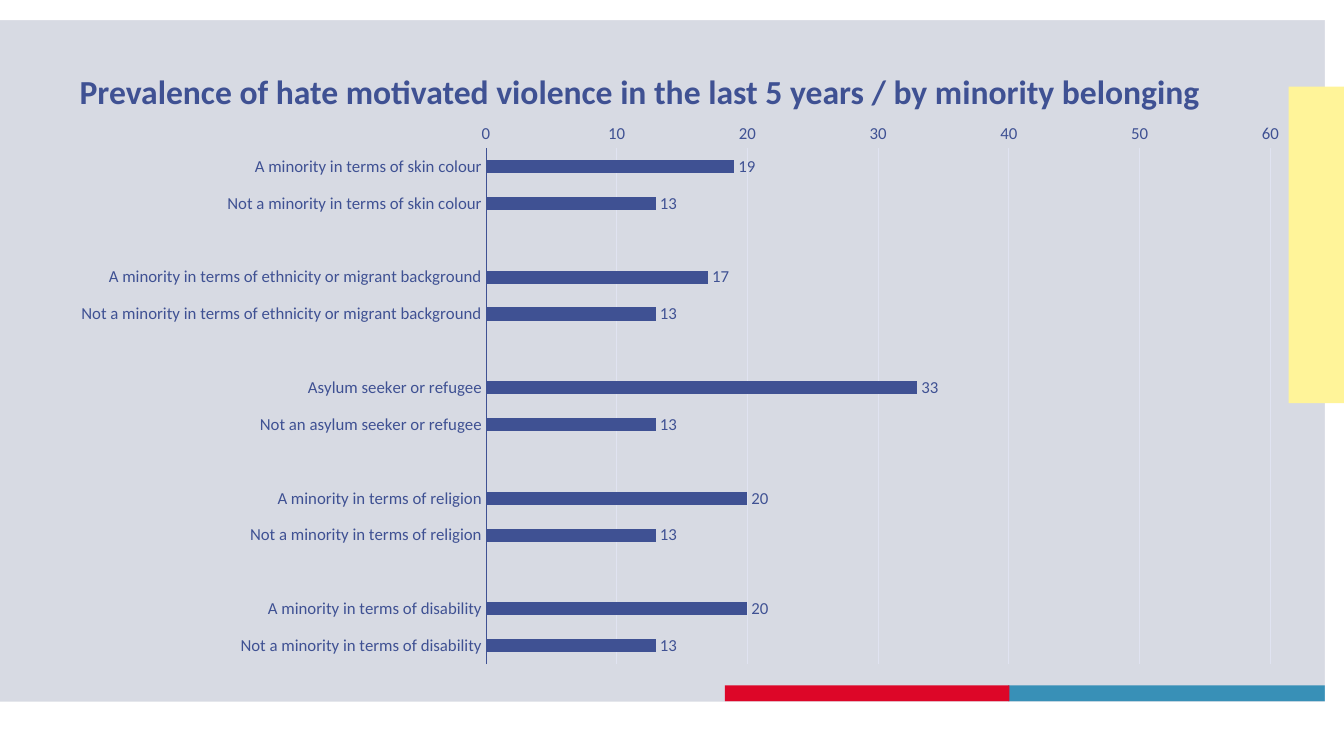
from lxml import etree
from pptx import Presentation
from pptx.chart.data import CategoryChartData
from pptx.dml.color import RGBColor
from pptx.enum.chart import XL_CHART_TYPE as ChartType
from pptx.enum.chart import XL_LABEL_POSITION as LabelPosition
from pptx.enum.chart import XL_TICK_MARK as TickMark
from pptx.enum.shapes import MSO_SHAPE as Shape
from pptx.enum.text import MSO_ANCHOR as Anchor
from pptx.oxml.ns import qn
from pptx.util import Inches, Pt

TITLE = "Prevalence of hate motivated violence in the last 5 years / by minority belonging"
FONT, NAVY, GRID, BACKGROUND = "Calibri", "3F5193", "E0E3F1", "D7DAE3"
NUMBER_FORMAT = "###0"

# Each pair compares a minority group with everyone else.
PAIRS = [
    (("A minority in terms of skin colour", 19),
     ("Not a minority in terms of skin colour", 13)),
    (("A minority in terms of ethnicity or migrant background", 17),
     ("Not a minority in terms of ethnicity or migrant background", 13)),
    (("Asylum seeker or refugee", 33),
     ("Not an asylum seeker or refugee", 13)),
    (("A minority in terms of religion", 20),
     ("Not a minority in terms of religion", 13)),
    (("A minority in terms of disability", 20),
     ("Not a minority in terms of disability", 13)),
]

# left, top, width, height, colour
BLOCKS = [
    (10, 6.8, 3.14, 0.16, "3890B7"),
    (7.19, 6.8, 2.82, 0.16, "DD0628"),
    (0, 0, 13.33, 0.2, "FFFFFF"),
    (13.14, 0, 0.2, 7.29, "FFFFFF"),
    (0, 6.96, 13.33, 0.55, "FFFFFF"),
    (12.78, 0.86, 0.55, 3.14, "FFF499"),
]
TITLE_BOX = (0.79, 0.75, 12.27, 0.36)
CHART_BOX = (0.57, 1.12, 12.37, 5.58)
PLOT_BOX = (4.82, 1.47, 7.78, 5.12)


def rgb(value):
    return RGBColor.from_string(value)


def inches(box):
    return [Inches(length) for length in box]


def style_font(font, size, bold=False):
    font.name, font.size, font.bold = FONT, Pt(size), bold
    font.color.rgb = rgb(NAVY)


def style_line(line, colour):
    line.color.rgb = rgb(colour)
    line.width = Pt(0.75)


def add_blocks(slide):
    for *box, colour in BLOCKS:
        block = slide.shapes.add_shape(Shape.RECTANGLE, *inches(box))
        block.shadow.inherit = False
        block.fill.solid()
        block.fill.fore_color.rgb = rgb(colour)
        block.line.fill.background()


def add_title(slide):
    frame = slide.shapes.add_textbox(*inches(TITLE_BOX)).text_frame
    frame.word_wrap = True
    frame.vertical_anchor = Anchor.BOTTOM
    frame.margin_left = frame.margin_top = frame.margin_right = frame.margin_bottom = 0
    para = frame.paragraphs[0]
    para.text = TITLE
    para.line_spacing = 0.9
    style_font(para.font, 24, bold=True)


def place_plot(chart):
    """Fix the inner plot area, as fractions of the chart frame."""
    area = chart.element.find(".//" + qn("c:plotArea"))
    for old in area.findall(qn("c:layout")):
        area.remove(old)
    layout = etree.Element(qn("c:layout"))
    manual = etree.SubElement(layout, qn("c:manualLayout"))
    left, top, width, height = CHART_BOX
    settings = {
        "layoutTarget": "inner", "xMode": "edge", "yMode": "edge",
        "x": round((PLOT_BOX[0] - left) / width, 4),
        "y": round((PLOT_BOX[1] - top) / height, 4),
        "w": round(PLOT_BOX[2] / width, 4),
        "h": round(PLOT_BOX[3] / height, 4),
    }
    for name, value in settings.items():
        etree.SubElement(manual, qn("c:" + name)).set("val", str(value))
    area.insert(0, layout)


def add_prevalence_chart(slide):
    data = CategoryChartData(number_format=NUMBER_FORMAT)
    rows = []
    for pair in PAIRS:
        if rows:
            rows.append(("", None))
        rows.extend(pair)
    data.categories = [label for label, _ in rows]
    data.add_series("Series 1", [value for _, value in rows])
    chart = slide.shapes.add_chart(
        ChartType.BAR_CLUSTERED, *inches(CHART_BOX), data).chart
    chart.has_legend = chart.has_title = False
    style_font(chart.font, 12)
    place_plot(chart)

    for axis in (chart.category_axis, chart.value_axis):
        axis.major_tick_mark = axis.minor_tick_mark = TickMark.NONE
        style_font(axis.tick_labels.font, 12)
    chart.category_axis.reverse_order = True
    style_line(chart.category_axis.format.line, NAVY)

    values = chart.value_axis
    values.minimum_scale, values.maximum_scale, values.major_unit = 0, 60, 10
    values.tick_labels.number_format = NUMBER_FORMAT
    values.tick_labels.number_format_is_linked = False
    values.format.line.fill.background()
    values.has_major_gridlines = True
    style_line(values.major_gridlines.format.line, GRID)

    plot = chart.plots[0]
    plot.gap_width = 182
    plot.vary_by_categories = False
    bars = plot.series[0]
    bars.format.fill.solid()
    bars.format.fill.fore_color.rgb = rgb(NAVY)
    labels = bars.data_labels
    labels.show_value = True
    labels.position = LabelPosition.OUTSIDE_END
    labels.number_format = NUMBER_FORMAT
    labels.number_format_is_linked = False
    style_font(labels.font, 12)


def main():
    deck = Presentation()
    deck.slide_width, deck.slide_height = Inches(13.33), Inches(7.5)
    slide = deck.slides.add_slide(deck.slide_layouts[6])
    slide.background.fill.solid()
    slide.background.fill.fore_color.rgb = rgb(BACKGROUND)
    add_blocks(slide)
    add_title(slide)
    add_prevalence_chart(slide)
    deck.save("out.pptx")


if __name__ == "__main__":
    main()
